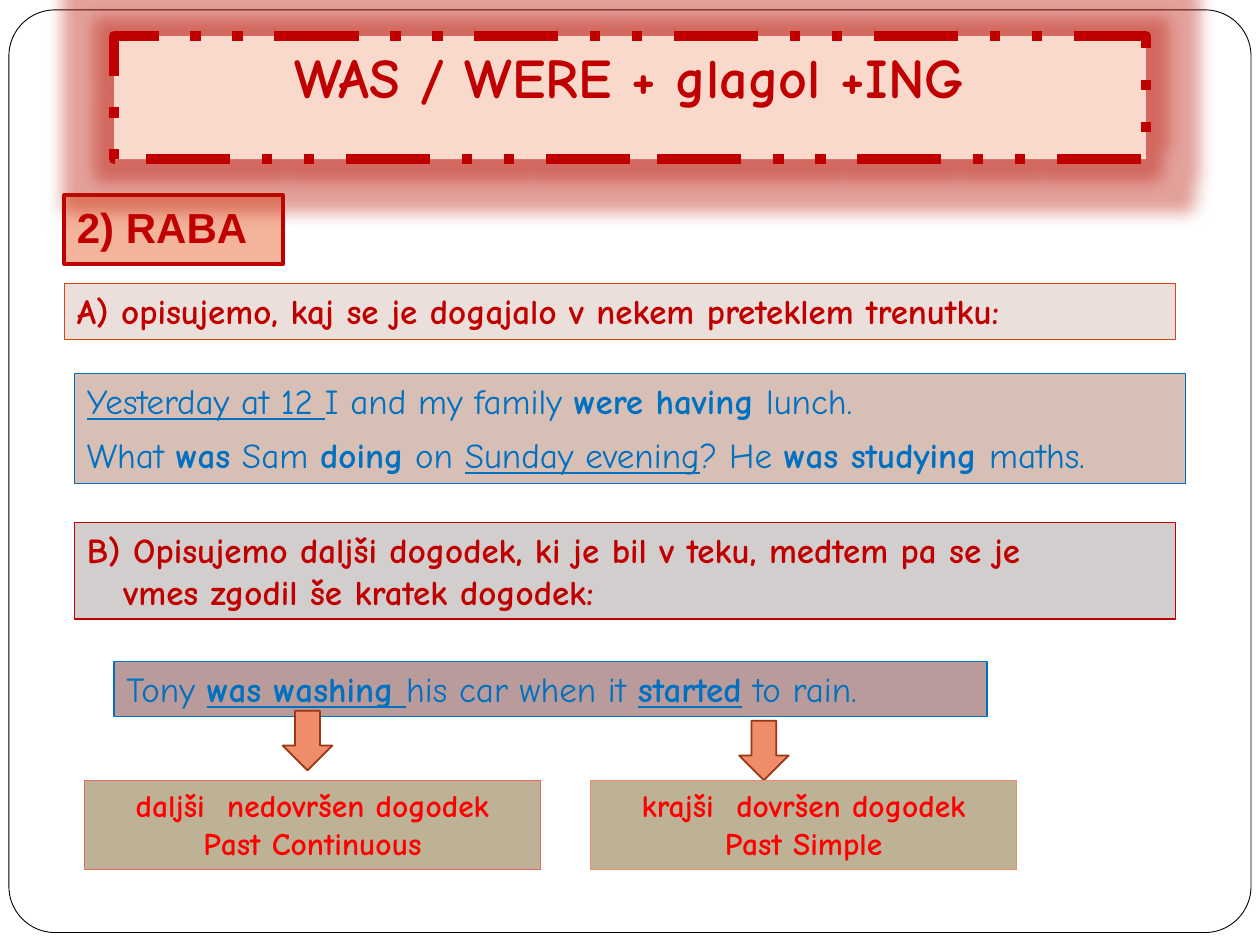
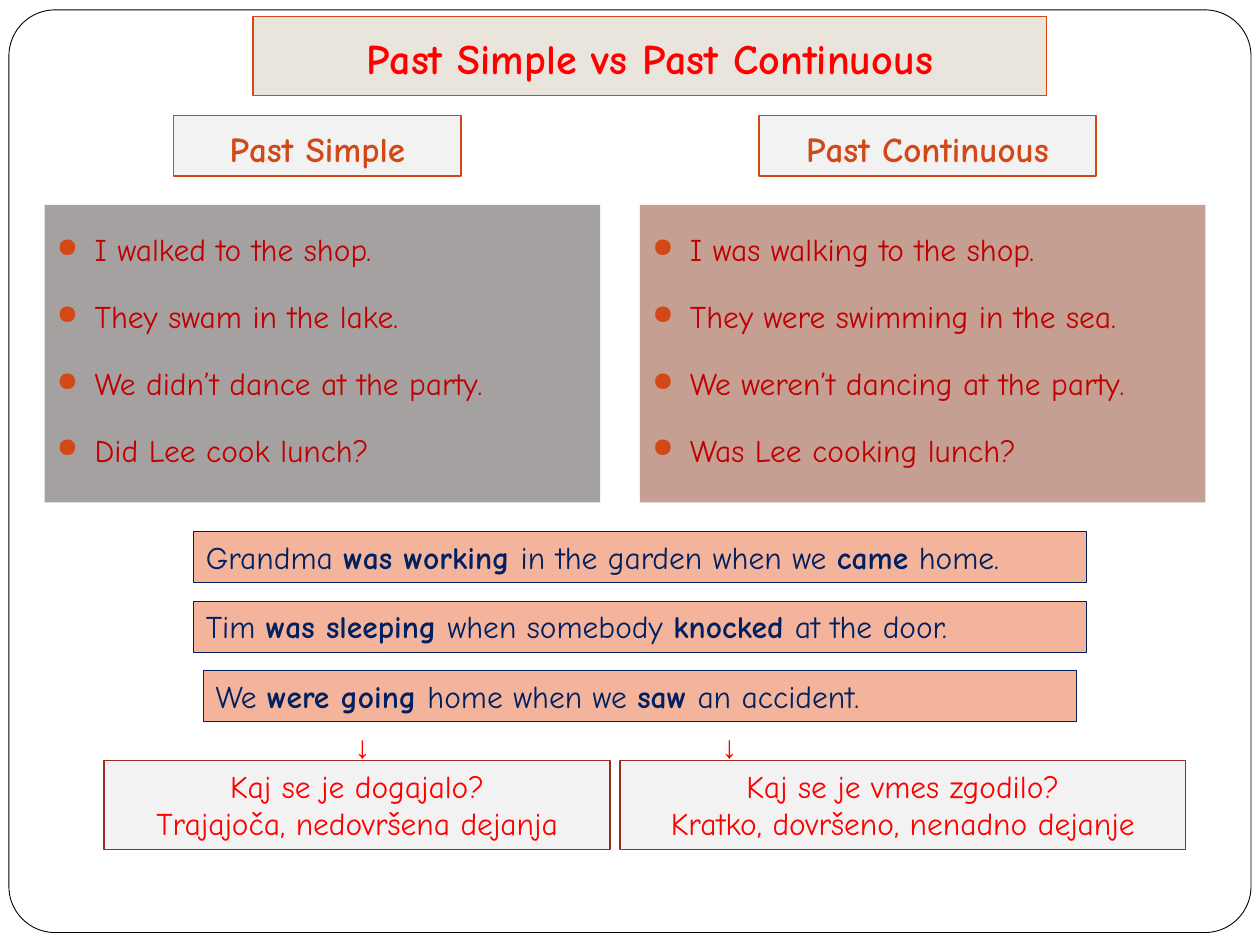
"""Build two grammar slides on the past continuous and the past simple."""
from dataclasses import dataclass

from lxml import etree
from pptx import Presentation
from pptx import util as u
from pptx.dml.color import RGBColor
from pptx.enum import dml, shapes, text
from pptx.oxml import ns


@dataclass(frozen=True)
class Theme:
    font: str = "Comic Neue"
    heading_font: str = "Arial"
    symbol_font: str = "Times New Roman"
    white: str = "FFFFFF"
    black: str = "000000"
    crimson: str = "C00000"
    red: str = "FF0000"
    orange: str = "D34817"
    blue: str = "0070C0"
    navy: str = "002060"
    rust: str = "9C3511"
    brick: str = "9B2D1F"
    coral: str = "EF8C6A"
    rose: str = "DF6C5D"
    salmon: str = "F4B39B"
    peach: str = "FAD9CD"
    blush: str = "EBDFDB"
    clay: str = "D8BFB6"
    mist: str = "D3CECE"
    mauve: str = "B99B9B"
    khaki: str = "BDB196"
    cream: str = "E9E5DC"
    pale: str = "F2F2F2"
    gray: str = "A6A1A1"
    tan: str = "C49F92"
    glow: str = "B91405"
    banner: int = 32
    title: int = 24
    lead: int = 20
    body: int = 18


theme = Theme()
rgb = RGBColor.from_string
top, bottom = text.MSO_ANCHOR.TOP, text.MSO_ANCHOR.BOTTOM


def add_box(page, area, fill=None, line=None, width=0.75, kind=shapes.MSO_SHAPE.RECTANGLE):
    box = page.shapes.add_shape(kind, *(u.Cm(length) for length in area))
    box.shadow.inherit = False
    if fill:
        box.fill.solid()
        box.fill.fore_color.rgb = rgb(fill)
    else:
        box.fill.background()
    if line:
        box.line.color.rgb = rgb(line)
        box.line.width = u.Pt(width)
    else:
        box.line.fill.background()
    return box


def write(box, paragraphs, color, size=theme.body, font=theme.font, bold=False,
          center=False, anchor=top, before=0, bullets=False):
    frame = box.text_frame
    frame.word_wrap = True
    frame.vertical_anchor = anchor
    for index, runs in enumerate(paragraphs):
        para = frame.paragraphs[0] if index == 0 else frame.add_paragraph()
        para.alignment = text.PP_ALIGN.CENTER if center else text.PP_ALIGN.LEFT
        para.space_before = u.Pt(before)
        if bullets:
            para.line_spacing = 1.5
            props = para._p.get_or_add_pPr()
            props.set("marL", str(u.Cm(0.76)))
            props.set("indent", str(-u.Cm(0.76)))
            tint = etree.SubElement(props, ns.qn("a:buClr"))
            etree.SubElement(tint, ns.qn("a:srgbClr"), val=theme.orange)
            etree.SubElement(props, ns.qn("a:buSzPct"), val="85000")
            etree.SubElement(props, ns.qn("a:buChar"), char="●")
        for words, style in runs:
            span = para.add_run()
            span.text = words
            span.font.name = font
            span.font.size = u.Pt(size)
            span.font.color.rgb = rgb(color)
            span.font.bold = bold or "b" in style
            span.font.underline = "u" in style


deck = Presentation()
deck.slide_width, deck.slide_height = u.Cm(25.4), u.Cm(19.05)
usage, contrast = (deck.slides.add_slide(deck.slide_layouts[6]) for _ in range(2))

border = add_box(usage, (0.18, 0.2, 25.04, 18.6), theme.white, theme.black, 0.5,
                 shapes.MSO_SHAPE.ROUNDED_RECTANGLE)
border.adjustments[0] = 0.05
border.element.nvSpPr.cNvPr.set("id", "20")
deck.slide_master.shapes.element.append(border.element)

heading = add_box(usage, (1.3, 3.93, 4.4, 1.4), theme.salmon, theme.crimson, 2.25)
heading.text_frame.margin_bottom = u.Cm(0.25)
write(heading, [[("2) RABA", "")]], theme.crimson, theme.title, theme.heading_font,
      bold=True, anchor=bottom)

rule_a = add_box(usage, (1.3, 5.72, 22.4, 1.12), theme.blush, theme.orange)
write(rule_a, [[("A) opisujemo, kaj se je dogajalo v nekem preteklem trenutku:", "")]],
      theme.crimson, theme.lead, bold=True)

examples = add_box(usage, (1.5, 7.53, 22.4, 2.22), theme.clay, theme.blue)
write(examples, [
    [("Yesterday at 12 ", "u"), ("I and my family ", ""), ("were having ", "b"), ("lunch.", "")],
    [("What ", ""), ("was", "b"), (" Sam ", ""), ("doing", "b"), (" on ", ""),
     ("Sunday evening", "u"), ("? He ", ""), ("was studying ", "b"), ("maths.", "")],
], theme.blue, theme.lead)
examples.text_frame.paragraphs[1].space_before = u.Pt(7)

rule_b = add_box(usage, (1.5, 10.53, 22.2, 1.95), theme.mist, theme.crimson)
write(rule_b, [
    [("B) Opisujemo daljši dogodek, ki je bil v teku, medtem pa se je", "")],
    [("vmes zgodil še kratek dogodek:", "")],
], theme.crimson, theme.lead, bold=True)
rule_b.text_frame.paragraphs[1]._p.get_or_add_pPr().set("marL", str(u.Cm(0.74)))

sentence = add_box(usage, (2.3, 13.33, 17.6, 1.12), theme.mauve, theme.blue)
write(sentence, [[("Tony ", ""), ("was washing ", "bu"), ("his car when it ", ""),
                  ("started", "bu"), (" to rain.", "")]], theme.blue, theme.lead)

for left, top_edge in ((5.7, 14.33), (14.9, 14.53)):
    add_box(usage, (left, top_edge, 1, 1.2), theme.coral, theme.rust, 1,
            shapes.MSO_SHAPE.DOWN_ARROW)

for left, width, line, event, tense in (
    (1.7, 9.2, theme.rose, "daljši  nedovršen dogodek", "Past Continuous"),
    (11.9, 8.6, theme.coral, "krajši  dovršen dogodek", "Past Simple"),
):
    label = add_box(usage, (left, 15.73, width, 1.8), theme.khaki, line)
    write(label, [[(event, "")], [(tense, "")]], theme.red, bold=True, center=True)

banner = add_box(usage, (2.3, 0.73, 20.8, 2.48), theme.peach, theme.crimson, 6)
banner.line.dash_style = dml.MSO_LINE.DASH_DOT_DOT
write(banner, [[("WAS / WERE + glagol +ING", "")]], theme.crimson, theme.banner,
      bold=True, center=True, before=12)
effects = banner.element.spPr.find(ns.qn("a:effectLst"))
glow = etree.SubElement(effects, ns.qn("a:glow"), rad=str(u.Pt(18)))
glow_color = etree.SubElement(glow, ns.qn("a:srgbClr"), val=theme.glow)
etree.SubElement(glow_color, ns.qn("a:alpha"), val="40000")

title = add_box(contrast, (5.1, 0.33, 16, 1.6), theme.cream, theme.orange)
title.text_frame.margin_bottom = u.Cm(0.25)
write(title, [[("Past Simple vs Past Continuous", "")]], theme.red, theme.title,
      bold=True, center=True, anchor=bottom)

for tense, tense_area, list_area, fill, sentences in (
    ("Past Simple", (3.5, 2.33, 5.8, 1.22), (0.9, 4.13, 11.2, 6), theme.gray,
     ("I walked to the shop.", "They swam in the lake.",
      "We didn’t dance at the party.", "Did Lee cook lunch?")),
    ("Past Continuous", (15.3, 2.33, 6.8, 1.22), (12.9, 4.13, 11.4, 6), theme.tan,
     ("I was walking to the shop.", "They were swimming in the sea.",
      "We weren’t dancing at the party.", "Was Lee cooking lunch?")),
):
    tense_box = add_box(contrast, tense_area, theme.pale, theme.orange, 1)
    write(tense_box, [[(tense, "")]], theme.orange, theme.lead, bold=True,
          center=True, anchor=bottom, before=5.8)
    list_box = add_box(contrast, list_area, fill)
    write(list_box, [[(words, "")] for words in sentences], theme.crimson,
          before=5.8, bullets=True)

for row, (left, width, runs) in enumerate((
    (3.9, 18, [("Grandma ", ""), ("was working ", "b"), ("in the garden when we ", ""),
               ("came", "b"), (" home.", "")]),
    (3.9, 18, [("Tim ", ""), ("was sleeping ", "b"), ("when somebody ", ""),
               ("knocked ", "b"), ("at the door.", "")]),
    (4.1, 17.6, [("We ", ""), ("were going ", "b"), ("home when we ", ""),
                 ("saw ", "b"), ("an accident.", "")]),
)):
    example = add_box(contrast, (left, 10.72 + 1.4 * row, width, 1.03),
                      theme.salmon, theme.navy)
    write(example, [runs], theme.navy)

for left, width in ((6.9, 1.2), (14.3, 0.8)):
    pointer = contrast.shapes.add_textbox(u.Cm(left), u.Cm(14.53), u.Cm(width), u.Cm(1.03))
    write(pointer, [[("↓", "")]], theme.red, font=theme.symbol_font)

for left, width, question, answer in (
    (2.1, 10.2, "Kaj se je dogajalo?", "Trajajoča, nedovršena dejanja"),
    (12.5, 11.4, "Kaj se je vmes zgodilo?", "Kratko, dovršeno, nenadno dejanje"),
):
    summary = add_box(contrast, (left, 15.33, width, 1.8), theme.pale, theme.brick)
    write(summary, [[(question, "")], [(answer, "")]], theme.red, center=True)

deck.save("out.pptx")
